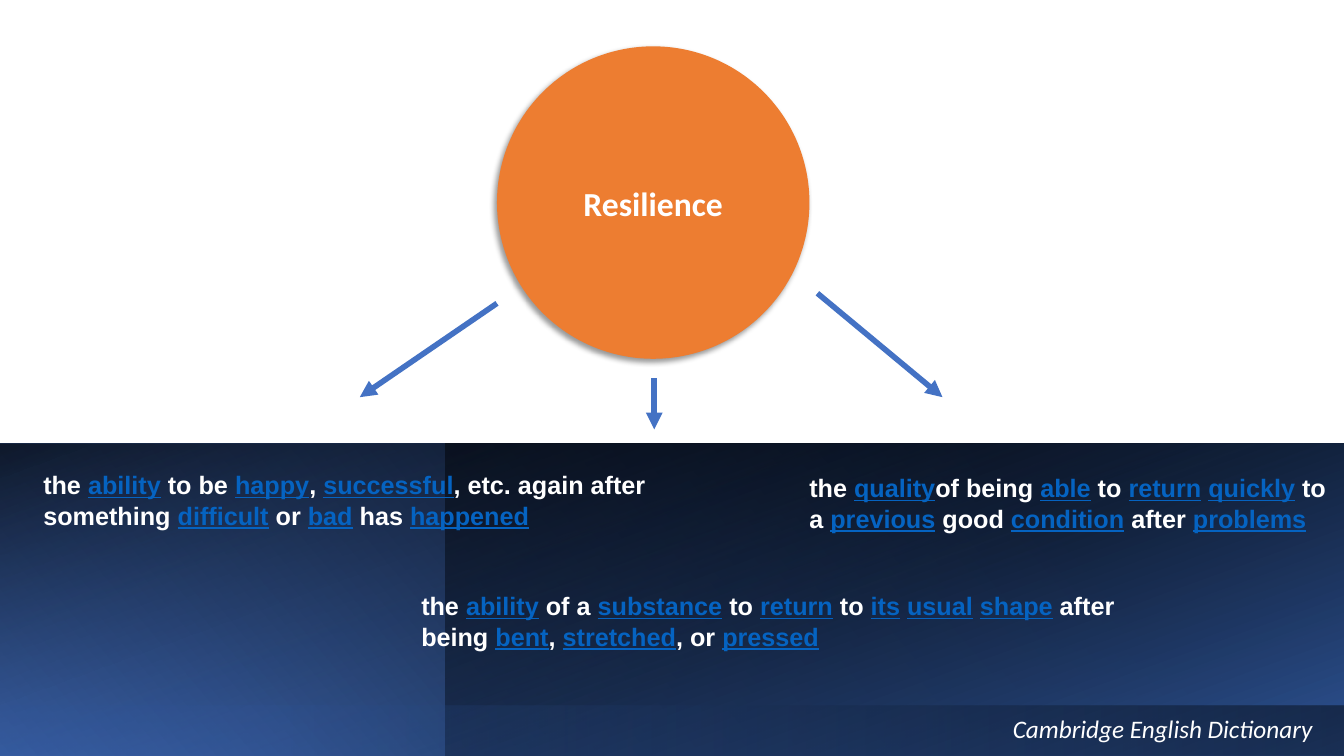
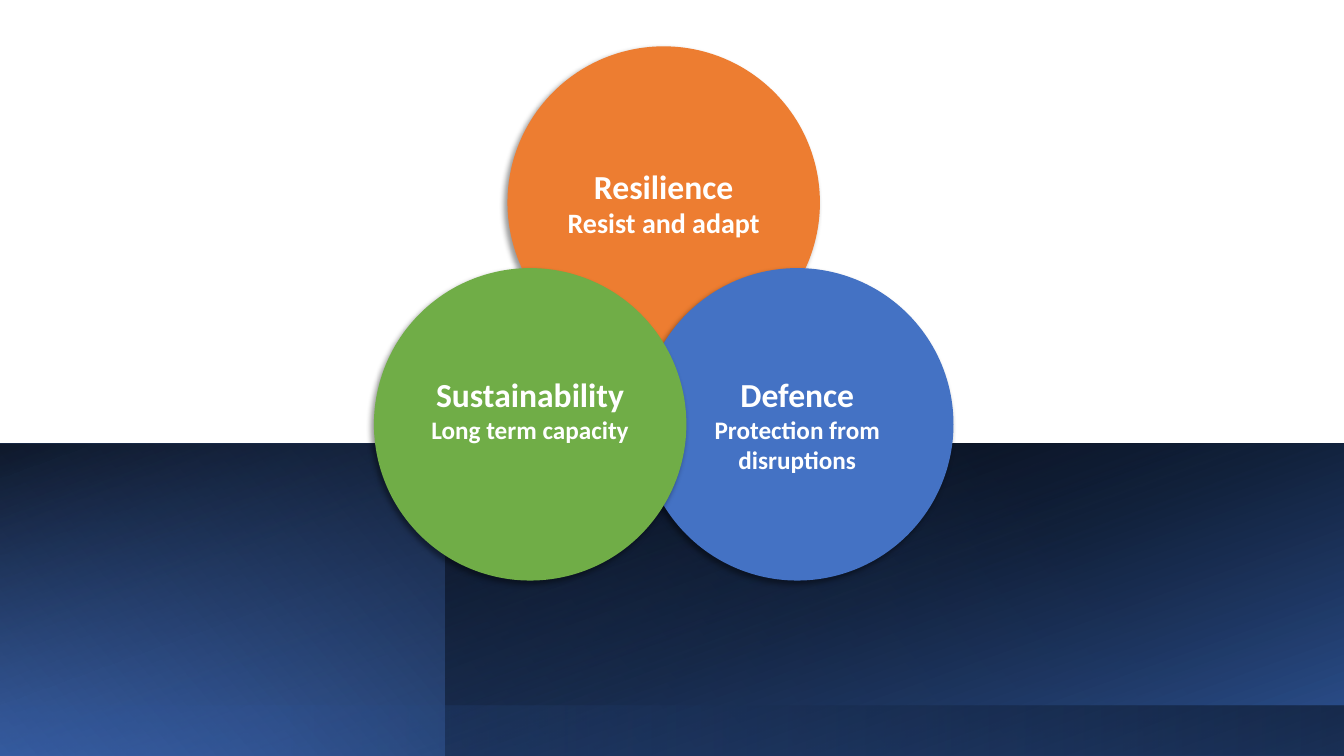
from pptx import Presentation
from pptx.dml.color import RGBColor
from pptx.enum import shapes, text
from pptx.oxml import parse_xml
from pptx.oxml.ns import nsdecls, qn
from pptx.util import Pt

WIDTH, HEIGHT = 960, 540
BLUE, ORANGE, GREEN = "4472C4", "ED7D31", "70AD47"
WHITE, LINK = "FFFFFF", "0563C1"
HARD_SPACE = chr(160)
DIAMETER = 223.2

BAND_TOP, FOOTER_TOP, PANEL_LEFT = 316.8, 504, 318.2
# Left, top, rotation, gradient angle, stops as (position, colour, opacity)
BANDS = [
    (0, BAND_TOP, 180, 40, [(0, BLUE, 100), (78, "000000", 100)]),
    (PANEL_LEFT, BAND_TOP, 0, 110, [(0, "000000", 63), (100, "2F5597", 100)]),
    (0, BAND_TOP, 0, 290, [(39, "203864", 0), (100, "000000", 72)]),
    (0, FOOTER_TOP, 0, 0, [(0, "000000", 43), (79, "2F5597", 22)]),
]

ARROWS = [
    (355, 216.7, 257, 283.7),
    (467.3, 270, 467.3, 306.7),
    (583.9, 209.5, 673.2, 283.7),
]

# Left, top, width, text with linked words in brackets
DEFINITIONS = [
    (571, 334.1, 389,
     "the [quality]of being [able] to [return] [quickly] to a [previous] good "
     "[condition] after [problems]"),
    (293.8, 418.3, 639.4,
     "the [ability] of a [substance] to [return] to [its] [usual] [shape] "
     "after being [bent], [stretched], or [pressed]"),
    (23.8, 331.9, 639.4,
     "the [ability] to be [happy], [successful], etc. again after something "
     "[difficult] or [bad] has [happened]"),
]


def color(value):
    return RGBColor.from_string(value)


class Deck:
    def __init__(self):
        self.deck = Presentation()
        self.deck.slide_width, self.deck.slide_height = Pt(WIDTH), Pt(HEIGHT)
        self.page = None

    def add_page(self):
        self.page = self.deck.slides.add_slide(self.deck.slide_layouts[6])
        for band in BANDS:
            self.add_band(*band)

    def add_shape(self, kind, left, top, width, height):
        shape = self.page.shapes.add_shape(
            kind, Pt(left), Pt(top), Pt(width), Pt(height))
        shape.shadow.inherit = False
        shape.line.fill.background()
        return shape

    def add_band(self, left, top, rotation, angle, stops):
        """Add a mirrored gradient band reaching the right and bottom edges."""
        band = self.add_shape(shapes.MSO_SHAPE.RECTANGLE, left, top,
                              WIDTH - left, HEIGHT - top)
        band.rotation = rotation
        band.fill.background()
        properties = band.element.spPr
        properties.find(qn("a:xfrm")).set("flipH", "1")
        stop_xml = "".join(
            f'<a:gs pos="{position * 1000}"><a:srgbClr val="{value}">'
            f'<a:alpha val="{opacity * 1000}"/></a:srgbClr></a:gs>'
            for position, value, opacity in stops)
        gradient = parse_xml(
            f'<a:gradFill {nsdecls("a")} rotWithShape="1">'
            f'<a:gsLst>{stop_xml}</a:gsLst>'
            f'<a:lin ang="{angle * 60000}" scaled="0"/></a:gradFill>')
        properties.replace(properties.find(qn("a:noFill")), gradient)

    def add_circle(self, left, top, fill, heading, detail="", size=18, lift=0):
        """Add a shadowed circle; lift is extra room kept below its text."""
        circle = self.add_shape(shapes.MSO_SHAPE.OVAL, left, top,
                                DIAMETER, DIAMETER)
        circle.fill.solid()
        circle.fill.fore_color.rgb = color(fill)
        circle.element.spPr.find(qn("a:effectLst")).append(parse_xml(
            f'<a:outerShdw {nsdecls("a")} blurRad="{Pt(4)}" dist="{Pt(3)}" '
            f'dir="{135 * 60000}" algn="tr" rotWithShape="0">'
            '<a:srgbClr val="000000"><a:alpha val="40000"/></a:srgbClr>'
            '</a:outerShdw>'))
        frame = circle.text_frame
        frame.vertical_anchor = text.MSO_ANCHOR.MIDDLE
        frame.margin_bottom = Pt(3.6 + lift)
        self.set_para(frame.paragraphs[0], heading, 24, bold=True,
                      centred=True)
        if detail:
            self.set_para(frame.add_paragraph(), detail, size, bold=True,
                          centred=True)

    def add_arrow(self, *ends):
        arrow = self.page.shapes.add_connector(
            shapes.MSO_CONNECTOR.STRAIGHT, *map(Pt, ends))
        arrow.line.color.rgb = color(BLUE)
        arrow.line.width = Pt(4)
        properties = arrow.element.spPr
        properties.find(qn("a:ln")).append(
            parse_xml(f'<a:tailEnd {nsdecls("a")} type="triangle"/>'))
        properties.append(parse_xml(f'<a:effectLst {nsdecls("a")}/>'))

    def add_text(self, left, top, width, height, words, **style):
        box = self.page.shapes.add_textbox(
            Pt(left), Pt(top), Pt(width), Pt(height))
        frame = box.text_frame
        frame.word_wrap = True
        frame.auto_size = text.MSO_AUTO_SIZE.SHAPE_TO_FIT_TEXT
        self.set_para(frame.paragraphs[0], words, 18, **style)

    def set_para(self, para, words, size, font="Calibri", bold=False,
                 italic=False, centred=False):
        """Set white text; words in brackets look like links.

        Spaces next to a linked word do not break.
        """
        para.alignment = text.PP_ALIGN.CENTER if centred else text.PP_ALIGN.LEFT
        para.font.name, para.font.size = font, Pt(size)
        para.font.bold, para.font.italic = bold, italic
        para.font.color.rgb = color(WHITE)
        words = words.replace(" [", HARD_SPACE + "[")
        words = words.replace("] ", "]" + HARD_SPACE)
        for index, piece in enumerate(words.replace("]", "[").split("[")):
            if not piece:
                continue
            span = para.add_run()
            span.text = piece
            if index % 2:
                span.font.color.rgb = color(LINK)
                span.font.underline = True


def add_definitions(deck):
    deck.add_page()
    deck.add_circle(355, 33.1, ORANGE, "Resilience")
    for ends in ARROWS:
        deck.add_arrow(*ends)
    for left, top, width, words in DEFINITIONS:
        deck.add_text(left, top, width, 51.1, words, font="Arial", bold=True)
    deck.add_text(716.4, 506.2, 243.6, 28.8, "Cambridge English Dictionary",
                  italic=True)


def add_overlap(deck):
    middle, offset, lower = 362.5, 95.4, 191.5
    deck.add_page()
    deck.add_circle(middle, 33.1, ORANGE, "Resilience", "Resist and adapt",
                    size=20)
    deck.add_circle(middle + offset, lower, BLUE, "Defence",
                    "Protection from disruptions")
    deck.add_circle(middle - offset, lower, GREEN, "Sustainability",
                    "Long term capacity", lift=22)


def main():
    deck = Deck()
    add_definitions(deck)
    add_overlap(deck)
    deck.deck.save("out.pptx")


if __name__ == "__main__":
    main()
